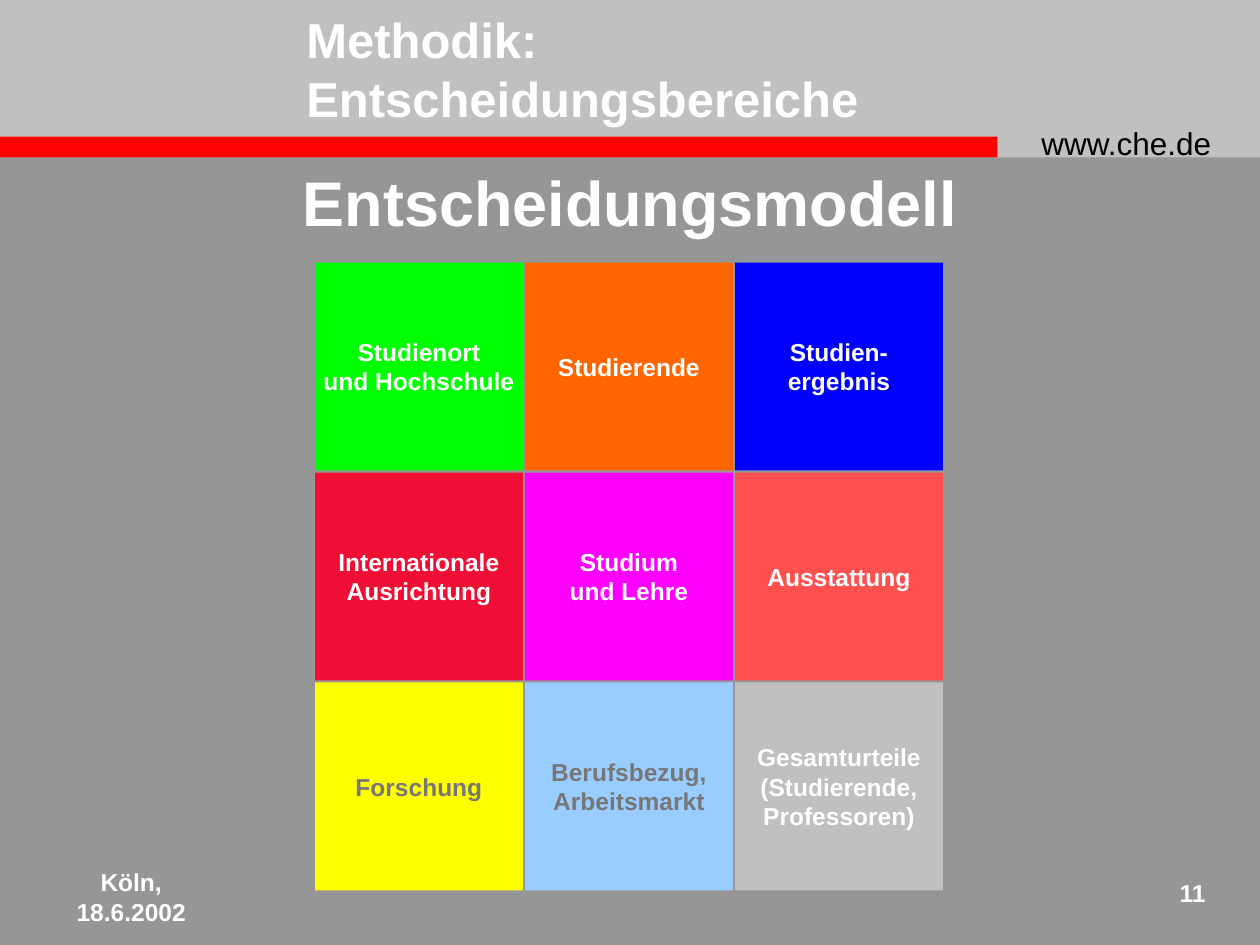
from pptx import Presentation
from pptx.dml.color import RGBColor
from pptx.enum.shapes import MSO_SHAPE as Shape
from pptx.enum.text import MSO_ANCHOR as Anchor, PP_ALIGN as Align
from pptx.util import Pt

WHITE, GRAY, SILVER = "FFFFFF", "777777", "C0C0C0"

BANDS = [
    (0, 0, 720, 90, SILVER),
    (-1, 78, 571, 12, "FF0000"),
]

LABELS = [
    (["www.che.de"], 588, 67.5, 126, 29, 18, "000000", False, Align.LEFT, Anchor.TOP),
    (["Köln,", "18.6.2002"], 0, 492, 150, 36, 14, WHITE, True, Align.CENTER, Anchor.TOP),
    (["11"], 654, 498, 42, 30, 14, WHITE, True, Align.RIGHT, Anchor.TOP),
    (["Entscheidungsmodell"], 0, 90, 720, 50.5, 36, WHITE, True, Align.CENTER, Anchor.TOP),
    (["Methodik: Entscheidungsbereiche"], 168, 0, 402, 78, 28, WHITE, True, Align.LEFT, Anchor.MIDDLE),
]

DECISION_AREAS = [
    [
        (["Studienort", "und Hochschule"], "00FF00", WHITE),
        (["Studierende"], "FF6600", WHITE),
        (["Studien-", "ergebnis"], "0000FF", WHITE),
    ],
    [
        (["Internationale", "Ausrichtung"], "F00E34", WHITE),
        (["Studium", "und Lehre"], "FF00FF", WHITE),
        (["Ausstattung"], "FF5050", WHITE),
    ],
    [
        (["Forschung"], "FFFF00", GRAY),
        (["Berufsbezug,", "Arbeitsmarkt"], "99CCFF", GRAY),
        (["Gesamturteile", "(Studierende,", "Professoren)"], SILVER, WHITE),
    ],
]
GRID_LEFT, GRID_TOP, PITCH, TILE = 180, 150, 120, 118.8


def color(value):
    return RGBColor.from_string(value)


def write(shape, lines, size, ink, bold, align, anchor, wrap):
    frame = shape.text_frame
    frame.word_wrap = wrap
    frame.vertical_anchor = anchor
    frame.text = "\n".join(lines)
    for paragraph in frame.paragraphs:
        paragraph.alignment = align
        font = paragraph.font
        font.name, font.size, font.bold = "Arial", Pt(size), bold
        font.color.rgb = color(ink)


def add_rectangle(slide, left, top, width, height, fill):
    shape = slide.shapes.add_shape(Shape.RECTANGLE, Pt(left), Pt(top), Pt(width), Pt(height))
    shape.shadow.inherit = False
    shape.fill.solid()
    shape.fill.fore_color.rgb = color(fill)
    shape.line.fill.background()
    return shape


def main():
    presentation = Presentation()
    presentation.slide_width, presentation.slide_height = Pt(720), Pt(540)
    slide = presentation.slides.add_slide(presentation.slide_layouts[6])
    slide.background.fill.solid()
    slide.background.fill.fore_color.rgb = color("969696")

    for band in BANDS:
        add_rectangle(slide, *band)

    for lines, left, top, width, height, *style in LABELS:
        box = slide.shapes.add_textbox(Pt(left), Pt(top), Pt(width), Pt(height))
        write(box, lines, *style, wrap=True)

    for row, areas in enumerate(DECISION_AREAS):
        for column, (lines, fill, ink) in enumerate(areas):
            tile = add_rectangle(
                slide, GRID_LEFT + column * PITCH, GRID_TOP + row * PITCH, TILE, TILE, fill
            )
            write(tile, lines, 14, ink, True, Align.CENTER, Anchor.MIDDLE, wrap=False)

    presentation.save("out.pptx")


if __name__ == "__main__":
    main()
